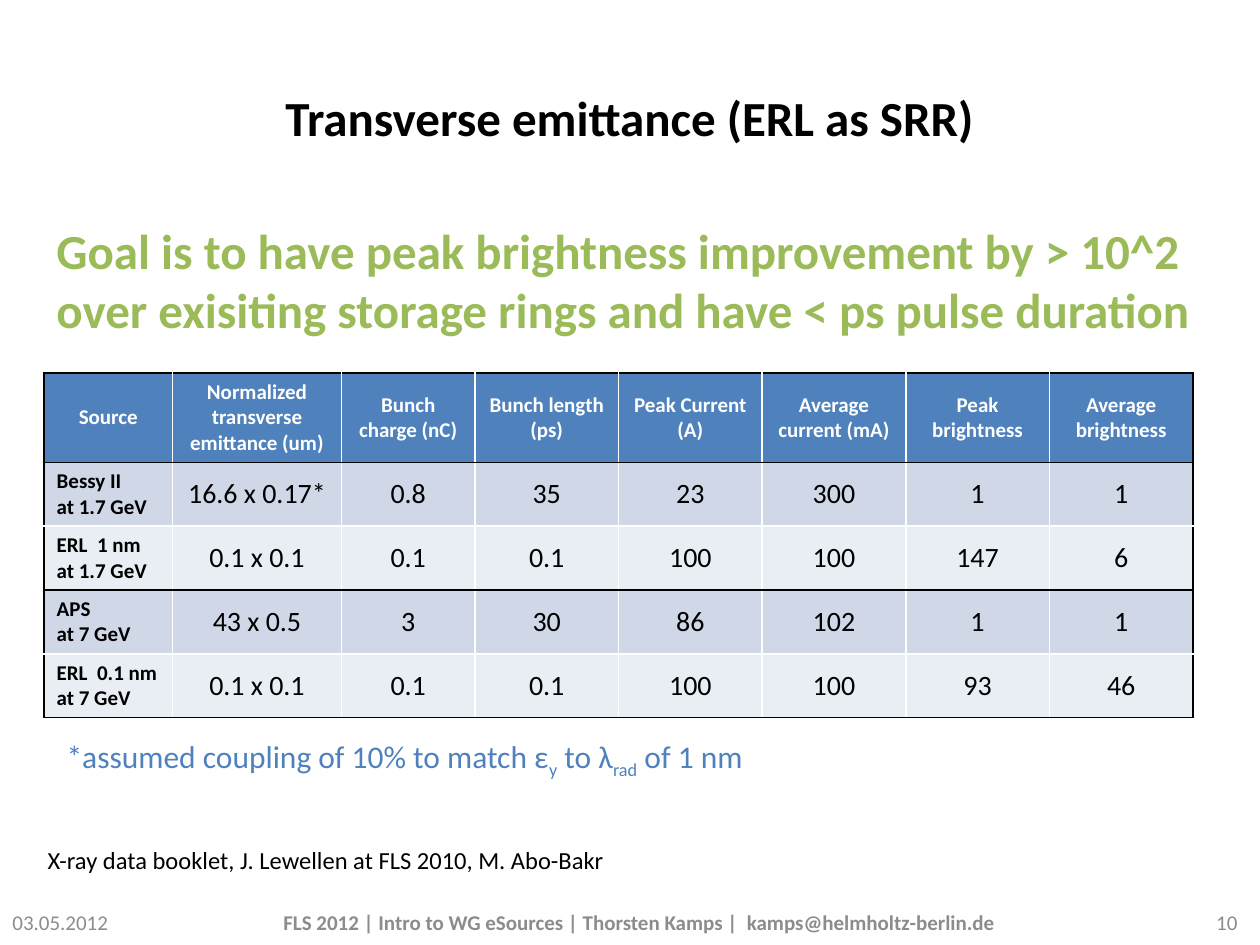
from lxml import etree
from pptx import Presentation
from pptx import util as u
from pptx.dml.color import RGBColor
from pptx.enum import text
from pptx.oxml.ns import qn

COLORS = {
    "black": "000000",
    "white": "FFFFFF",
    "green": "9BBB59",
    "blue": "4F81BD",
    "gray": "8C8C8C",
    "band_dark": "D0D8E8",
    "band_light": "E9EDF4",
}
LEFT, CENTER, RIGHT = text.PP_ALIGN.LEFT, text.PP_ALIGN.CENTER, text.PP_ALIGN.RIGHT
TOP, MIDDLE = text.MSO_ANCHOR.TOP, text.MSO_ANCHOR.MIDDLE

HEADERS = [
    "Source", "Normalized transverse emittance (um)", "Bunch charge (nC)",
    "Bunch length (ps)", "Peak Current (A)", "Average current (mA)",
    "Peak brightness", "Average brightness",
]
SOURCES = [
    ["Bessy II\nat 1.7 GeV", "16.6 x 0.17*", "0.8", "35", "23", "300", "1", "1"],
    ["ERL  1 nm\nat 1.7 GeV", "0.1 x 0.1", "0.1", "0.1", "100", "100", "147", "6"],
    ["APS\nat 7 GeV", "43 x 0.5", "3", "30", "86", "102", "1", "1"],
    ["ERL  0.1 nm\nat 7 GeV", "0.1 x 0.1", "0.1", "0.1", "100", "100", "93", "46"],
]
COLUMN_WIDTHS = [1.02, 1.34, 1.06] + [1.14] * 5
ROW_HEIGHTS = [0.7] + [0.5] * 4


class SlideBuilder:
    font = "Calibri"

    def __init__(self, page):
        self.page = page

    def style(self, span, size, color, bold=False):
        for name, value in {"name": self.font, "size": u.Pt(size), "bold": bold}.items():
            setattr(span.font, name, value)
        span.font.color.rgb = RGBColor.from_string(COLORS[color])

    def add_text(self, frame, paragraphs, size, color, bold=False, align=LEFT):
        for index, pieces in enumerate(paragraphs):
            para = frame.add_paragraph() if index else frame.paragraphs[0]
            para.alignment = align
            for position, piece in enumerate(pieces):
                span = para.add_run()
                span.text = piece
                self.style(span, size, color, bold)
                if position % 2:
                    span._r.get_or_add_rPr().set("baseline", "-25000")

    def text_box(self, bounds, pieces, size, color, bold=False, align=LEFT,
                 anchor=TOP, wrap=True):
        box = self.page.shapes.add_textbox(*map(u.Inches, bounds))
        fit = text.MSO_AUTO_SIZE.NONE if wrap else text.MSO_AUTO_SIZE.SHAPE_TO_FIT_TEXT
        layout = {"word_wrap": wrap, "vertical_anchor": anchor, "auto_size": fit}
        for name, value in layout.items():
            setattr(box.text_frame, name, value)
        self.add_text(box.text_frame, [pieces], size, color, bold, align)

    def borders(self, cell, sides):
        properties = cell._tc.get_or_add_tcPr()
        for side, color in sides.items():
            line = etree.SubElement(properties, qn(f"a:ln{side}"), w=str(u.Pt(1)))
            fill = etree.SubElement(line, qn("a:solidFill"))
            etree.SubElement(fill, qn("a:srgbClr"), val=COLORS[color])

    def table(self, left, top, widths, heights, rows):
        bounds = map(u.Inches, (left, top, sum(widths), sum(heights)))
        grid = self.page.shapes.add_table(len(rows), len(widths), *bounds).table
        for column, width in zip(grid.columns, widths):
            column.width = u.Inches(width)
        for row, height in zip(grid.rows, heights):
            row.height = u.Inches(height)
        last = len(widths) - 1
        for r, values in enumerate(rows):
            for c, value in enumerate(values):
                cell = grid.cell(r, c)
                header, label = r == 0, r > 0 and c == 0
                self.borders(cell, {
                    "L": "black" if c == 0 else "white",
                    "R": "black" if c == last else "white",
                    "T": "black" if header or r % 2 else "white",
                    "B": "black" if r % 2 == 0 else "white",
                })
                band = "blue" if header else "band_dark" if r % 2 else "band_light"
                cell.fill.solid()
                cell.fill.fore_color.rgb = RGBColor.from_string(COLORS[band])
                cell.vertical_anchor = TOP if label else MIDDLE
                self.add_text(
                    cell.text_frame,
                    [[line] for line in value.split("\n")],
                    12 if header or label else 16,
                    "white" if header else "black",
                    header or label,
                    LEFT if label else CENTER,
                )


def main():
    deck = Presentation()
    deck.slide_width, deck.slide_height = u.Inches(10), u.Inches(7.5)
    builder = SlideBuilder(deck.slides.add_slide(deck.slide_layouts[6]))

    builder.text_box((0.35, 0.3, 9.29, 1.25), ["Transverse emittance (ERL as SRR)"],
                     28, "black", True, CENTER, MIDDLE)
    builder.text_box(
        (0.35, 1.7, 9.37, 1.42),
        ["Goal is to have peak brightness improvement by > 10^2 over exisiting "
         "storage rings and have < ps pulse duration"],
        28, "green", True)
    builder.table(0.35, 2.96, COLUMN_WIDTHS, ROW_HEIGHTS, [HEADERS] + SOURCES)
    builder.text_box(
        (0.43, 5.8, 5.67, 0.4),
        ["*assumed coupling of 10% to match ε", "y", " to λ", "rad", " of 1 nm"],
        18, "blue", wrap=False)
    builder.text_box((0.28, 6.66, 4.66, 0.34),
                     ["X-ray data booklet, J. Lewellen at FLS 2010, M. Abo-Bakr"],
                     14, "black", wrap=False)

    footer = [
        (0, 0.98, "03.05.2012", False, LEFT),
        (1.06, 8.03, "FLS 2012 | Intro to WG eSources | Thorsten Kamps |  "
                     "kamps@helmholtz-berlin.de", True, CENTER),
        (9.09, 0.83, "10", False, RIGHT),
    ]
    for left, width, label, bold, align in footer:
        builder.text_box((left, 7.13, width, 0.37), [label], 12, "gray",
                         bold, align, MIDDLE)

    deck.save("out.pptx")


if __name__ == "__main__":
    main()
